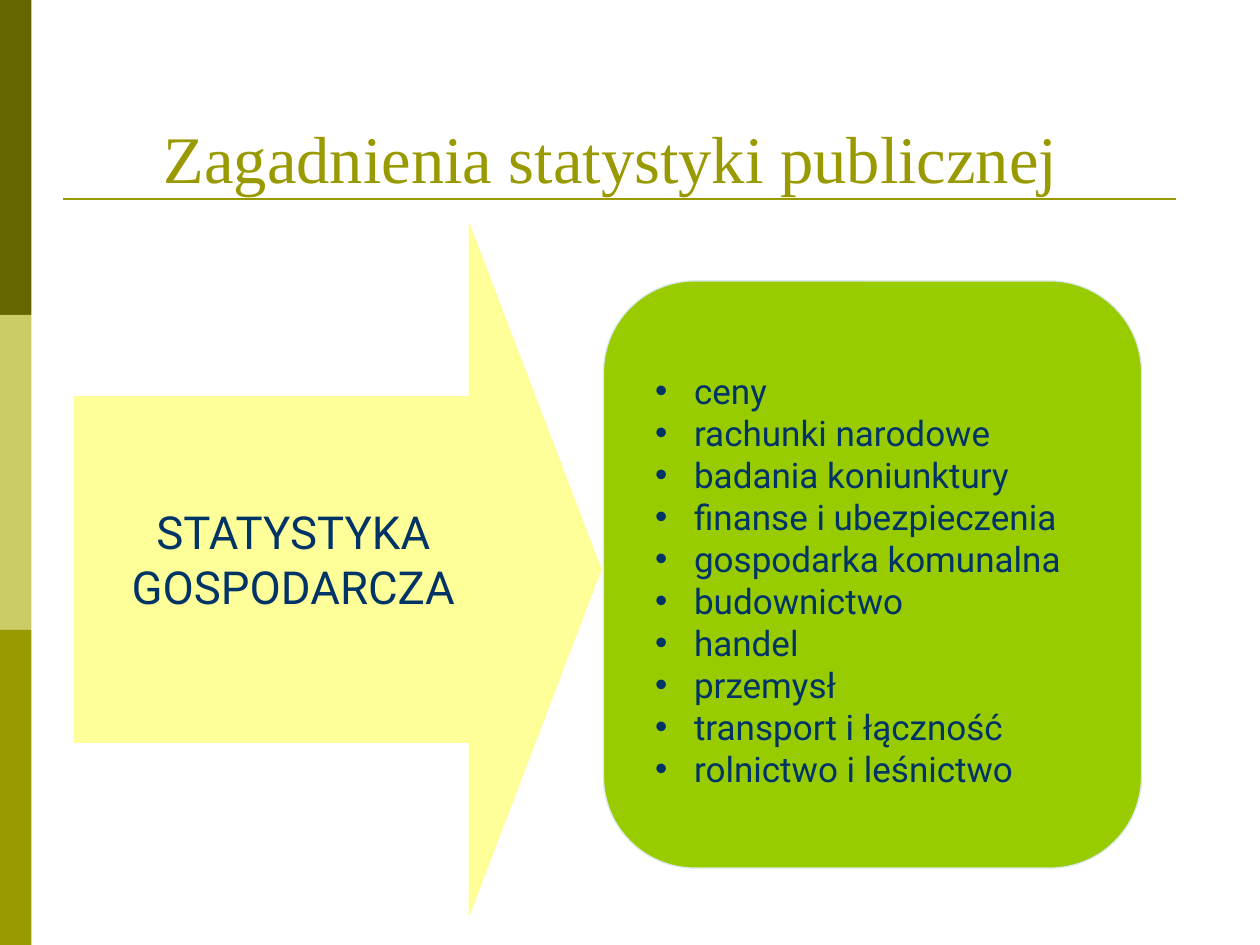
import pptx
import pptx.util
import pptx.dml.color
import pptx.enum.shapes
import pptx.enum.text
import pptx.oxml.ns
import lxml.etree

Inches = pptx.util.Inches
Pt = pptx.util.Pt
Kind = pptx.enum.shapes.MSO_SHAPE
Align = pptx.enum.text.PP_ALIGN
Anchor = pptx.enum.text.MSO_ANCHOR
qn = pptx.oxml.ns.qn


def color(hue):
    return pptx.dml.color.RGBColor.from_string(hue)


def block(kind, left, top, width, height, fill, line=None):
    shape = slide.shapes.add_shape(
        kind, Inches(left), Inches(top), Inches(width), Inches(height))
    shape.shadow.inherit = False
    shape.fill.solid()
    shape.fill.fore_color.rgb = color(fill)
    if line:
        shape.line.color.rgb = color(line)
        shape.line.width = Pt(0.75)
    else:
        shape.line.fill.background()
    return shape


deck = pptx.Presentation()
deck.slide_width = Inches(10)
deck.slide_height = Inches(7.5)
slide = deck.slides.add_slide(deck.slide_layouts[5])

for row, hue in enumerate(["666600", "CCCC66", "999900"]):
    block(Kind.RECTANGLE, 0, row * 2.5, 0.25, 2.5, hue)

rule = slide.shapes.add_connector(
    pptx.enum.shapes.MSO_CONNECTOR.STRAIGHT,
    Inches(0.5), Inches(1.58), Inches(9.33), Inches(1.58))
rule.line.color.rgb = color("999900")
rule.line.width = Pt(1.5)
lxml.etree.SubElement(rule.line._get_or_add_ln().getparent(), qn("a:effectLst"))

title = slide.shapes.title
title.left, title.top = Inches(0.35), Inches(0.36)
title.width, title.height = Inches(9), Inches(1.25)
frame = title.text_frame
frame.text = "Zagadnienia statystyki publicznej"
frame.vertical_anchor = Anchor.BOTTOM
frame.paragraphs[0].alignment = Align.CENTER
font = frame.paragraphs[0].runs[0].font
font.name = "Times New Roman"
font.size = Pt(38)
font.color.rgb = color("999900")

arrow = block(Kind.RIGHT_ARROW, 0.59, 1.78, 4.18, 5.48, "FFFF99", "FFFF99")
arrow.adjustments[0] = 0.5
arrow.adjustments[1] = 0.25
label = block(Kind.RECTANGLE, 0.9, 3.5, 2.86, 1.95, "FFFF99", "FFFF99")
label.text_frame.margin_top = Inches(0.5)
label.text_frame.text = "STATYSTYKA GOSPODARCZA"

panel = block(Kind.ROUNDED_RECTANGLE, 4.79, 2.23, 4.27, 4.66, "99CC00", "DAE9EA")
panel.adjustments[0] = 0.17
topics = block(Kind.RECTANGLE, 5.1, 2.6, 3.68, 3.96, "99CC00", "99CC00")
topics.text_frame.margin_top = Inches(0.33)
topics.text_frame.text = "\n".join([
    "ceny", "rachunki narodowe", "badania koniunktury",
    "finanse i ubezpieczenia", "gospodarka komunalna", "budownictwo",
    "handel", "przemysł", "transport i łączność", "rolnictwo i leśnictwo"])

for shape, size, align in [(label, 26, Align.CENTER), (topics, 20, Align.LEFT)]:
    shape.text_frame.word_wrap = True
    shape.text_frame.vertical_anchor = Anchor.TOP
    for para in shape.text_frame.paragraphs:
        para.alignment = align
        font = para.runs[0].font
        font.name = "Roboto"
        font.size = Pt(size)
        font.color.rgb = color("003366")

for para in topics.text_frame.paragraphs:
    props = para._p.get_or_add_pPr()
    props.set("marL", str(Inches(0.31)))
    props.set("indent", str(-Inches(0.31)))
    lxml.etree.SubElement(props, qn("a:buFont")).set("typeface", "Arial")
    lxml.etree.SubElement(props, qn("a:buChar")).set("char", "•")

deck.save("out.pptx")
